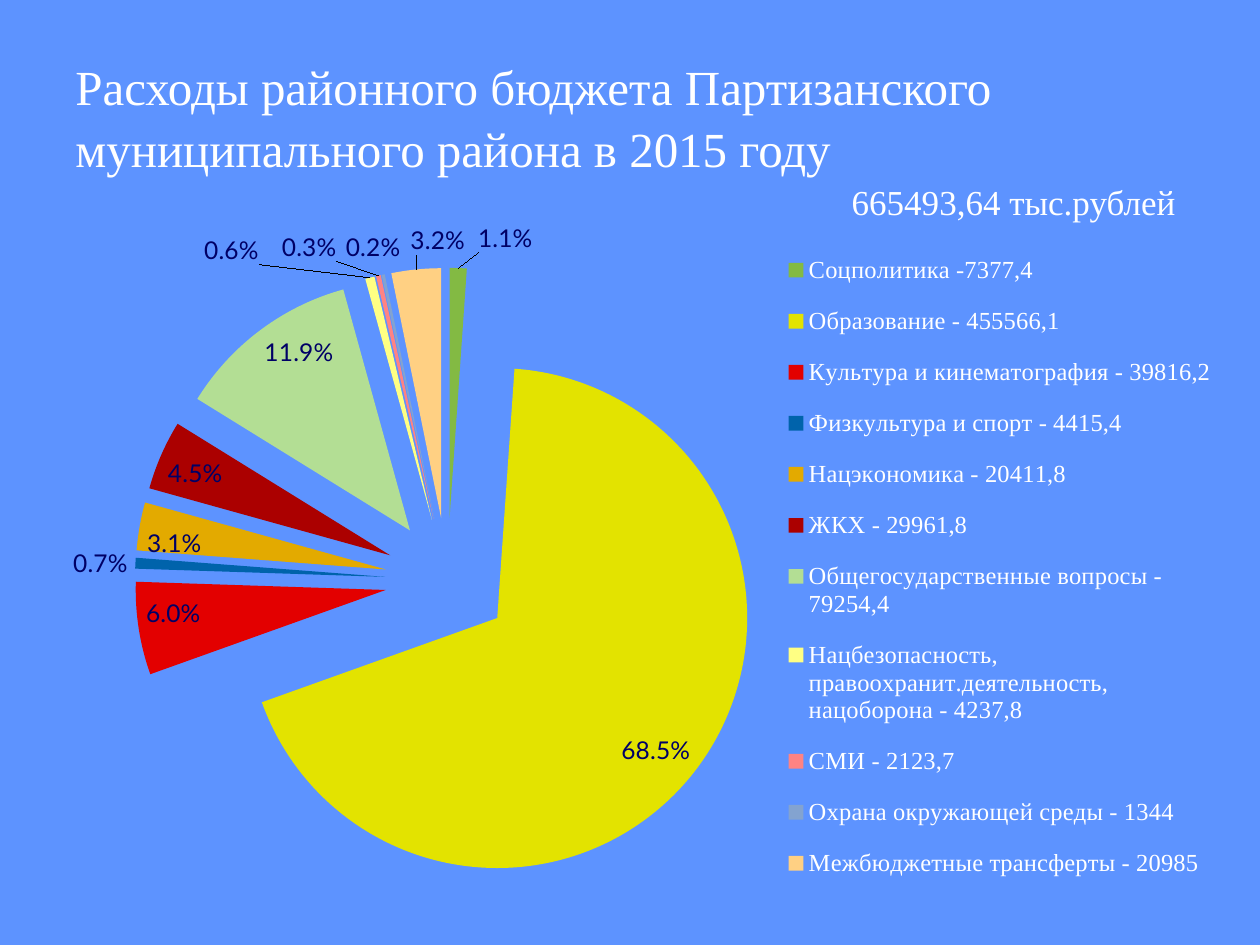
from dataclasses import dataclass

from lxml import etree
from pptx import Presentation
from pptx.chart.data import CategoryChartData
from pptx.dml.color import RGBColor
from pptx.enum.chart import XL_CHART_TYPE, XL_LABEL_POSITION, XL_LEGEND_POSITION
from pptx.enum.text import MSO_ANCHOR, PP_ALIGN
from pptx.oxml.ns import qn
from pptx.util import Pt

PIE = XL_CHART_TYPE.PIE_EXPLODED
INSIDE_END = XL_LABEL_POSITION.INSIDE_END
OUTSIDE_END = XL_LABEL_POSITION.OUTSIDE_END
LEGEND_RIGHT = XL_LEGEND_POSITION.RIGHT
LEFT, RIGHT = PP_ALIGN.LEFT, PP_ALIGN.RIGHT
TOP = MSO_ANCHOR.TOP
EMU_PER_PX = 914400 // 126


@dataclass(frozen=True)
class Theme:
    background: str = "5D93FF"
    text: str = "FFFFFF"
    label: str = "000066"
    heading_font: str = "Times New Roman"
    chart_font: str = "Lato"
    title_size: int = 28
    total_size: int = 20
    chart_size: int = 18
    detail_size: int = 14


THEME = Theme()

EXPENSES = [
    ("Соцполитика -7377,4", 1.1, "83BA43"),
    ("Образование - 455566,1", 68.5, "E3E300"),
    ("Культура и кинематография - 39816,2", 6, "E30000"),
    ("Физкультура и спорт - 4415,4", 0.7, "0063AB"),
    ("Нацэкономика - 20411,8", 3.1, "E3AA00"),
    ("ЖКХ - 29961,8", 4.5, "AB0000"),
    ("Общегосударственные вопросы - 79254,4", 11.9, "B3DE94"),
    ("Нацбезопасность, правоохранит.деятельность, нацоборона - 4237,8", 0.6, "FFFF83"),
    ("СМИ - 2123,7", 0.3, "FF8383"),
    ("Охрана окружающей среды - 1344", 0.2, "83A3D0"),
    ("Межбюджетные трансферты - 20985", 3.2, "FFD083"),
]
OUTSIDE_LABEL_SHIFTS = {
    0: (47, -8), 3: (0, 0), 7: (-109, -6), 8: (-40, -7), 9: (19, -6), 10: (50, -7),
}


def px(length):
    return length * EMU_PER_PX


def style_font(font, name, size, color):
    for key, value in {"name": name, "size": Pt(size), "bold": False}.items():
        setattr(font, key, value)
    font.color.rgb = RGBColor.from_string(color)


def add_heading(slide, box, text, size, alignment, line_spacing):
    frame = slide.shapes.add_textbox(*map(px, box)).text_frame
    settings = {"word_wrap": True, "vertical_anchor": TOP, "margin_top": 0, "margin_bottom": 0}
    for key, value in settings.items():
        setattr(frame, key, value)
    paragraph = frame.paragraphs[0]
    paragraph.text = text
    paragraph.alignment = alignment
    paragraph.line_spacing = line_spacing
    style_font(paragraph.font, THEME.heading_font, size, THEME.text)


def make_layout(values):
    layout = etree.Element(qn("c:layout"))
    manual = etree.SubElement(layout, qn("c:manualLayout"))
    for tag, value in values.items():
        etree.SubElement(manual, qn(f"c:{tag}"), val=str(value))
    return layout


def area_layout(box, area, target=None):
    left, top, width, height = area
    modes = {"layoutTarget": target} if target else {}
    return make_layout(modes | {
        "xMode": "edge", "yMode": "edge",
        "x": left / box[2], "y": top / box[3],
        "w": width / box[2], "h": height / box[3],
    })


def format_labels(series, box):
    labels = series.data_labels
    settings = {"show_value": True, "number_format": '0.0"%"',
                "number_format_is_linked": False, "position": INSIDE_END}
    for key, value in settings.items():
        setattr(labels, key, value)
    style_font(labels.font, THEME.chart_font, THEME.detail_size, THEME.label)
    for index, (shift_x, shift_y) in OUTSIDE_LABEL_SHIFTS.items():
        label = series.points[index].data_label
        style_font(label.font, THEME.chart_font, THEME.detail_size, THEME.label)
        label.position = OUTSIDE_END
        element = next(item for item in labels._element.findall(qn("c:dLbl"))
                       if item.find(qn("c:idx")).get("val") == str(index))
        number_format = etree.Element(qn("c:numFmt"), formatCode='0.0"%"', sourceLinked="0")
        element.insert(1, number_format)
        if shift_x or shift_y:
            element.insert(1, make_layout({"x": shift_x / box[2], "y": shift_y / box[3]}))


def add_expense_chart(slide, box):
    data = CategoryChartData()
    data.categories = [name for name, _, _ in EXPENSES]
    data.add_series("Series 1", [share for _, share, _ in EXPENSES])
    chart = slide.shapes.add_chart(PIE, *map(px, box), data).chart
    chart.has_title = False
    style_font(chart.font, THEME.chart_font, THEME.chart_size, THEME.text)

    plot = chart.plots[0]
    plot.vary_by_categories = True
    series = plot.series[0]
    for index, (_, _, color) in enumerate(EXPENSES):
        point = series.points[index]
        point.format.fill.solid()
        point.format.fill.fore_color.rgb = RGBColor.from_string(color)
        point.format.line.fill.background()
    explosion = series._element.find(qn("c:explosion"))
    if explosion is not None:
        explosion.set("val", "25")
    format_labels(series, box)

    chart.has_legend = True
    legend = chart.legend
    legend.position = LEGEND_RIGHT
    legend.include_in_layout = False
    style_font(legend.font, THEME.heading_font, THEME.detail_size, THEME.text)
    for old_layout in legend._element.findall(qn("c:layout")):
        legend._element.remove(old_layout)
    legend._element.find(qn("c:legendPos")).addnext(area_layout(box, (744, 16, 434, 668)))

    plot_area = plot._element.getparent()
    for old_layout in plot_area.findall(qn("c:layout")):
        plot_area.remove(old_layout)
    plot_area.insert(0, area_layout(box, (96, 51, 625, 625), "inner"))


def main():
    presentation = Presentation()
    presentation.slide_width = px(1260)
    presentation.slide_height = px(945)
    slide = presentation.slides.add_slide(presentation.slide_layouts[6])
    slide.background.fill.solid()
    slide.background.fill.fore_color.rgb = RGBColor.from_string(THEME.background)
    add_heading(slide, (63, 54, 1134, 120),
                "Расходы районного бюджета Партизанского муниципального района в 2015 году",
                THEME.title_size, LEFT, 1.05)
    add_heading(slide, (763, 180, 425, 44), "665493,64 тыс.рублей",
                THEME.total_size, RIGHT, 1.0)
    add_expense_chart(slide, (39, 217, 1191, 699))
    presentation.save("out.pptx")


if __name__ == "__main__":
    main()
